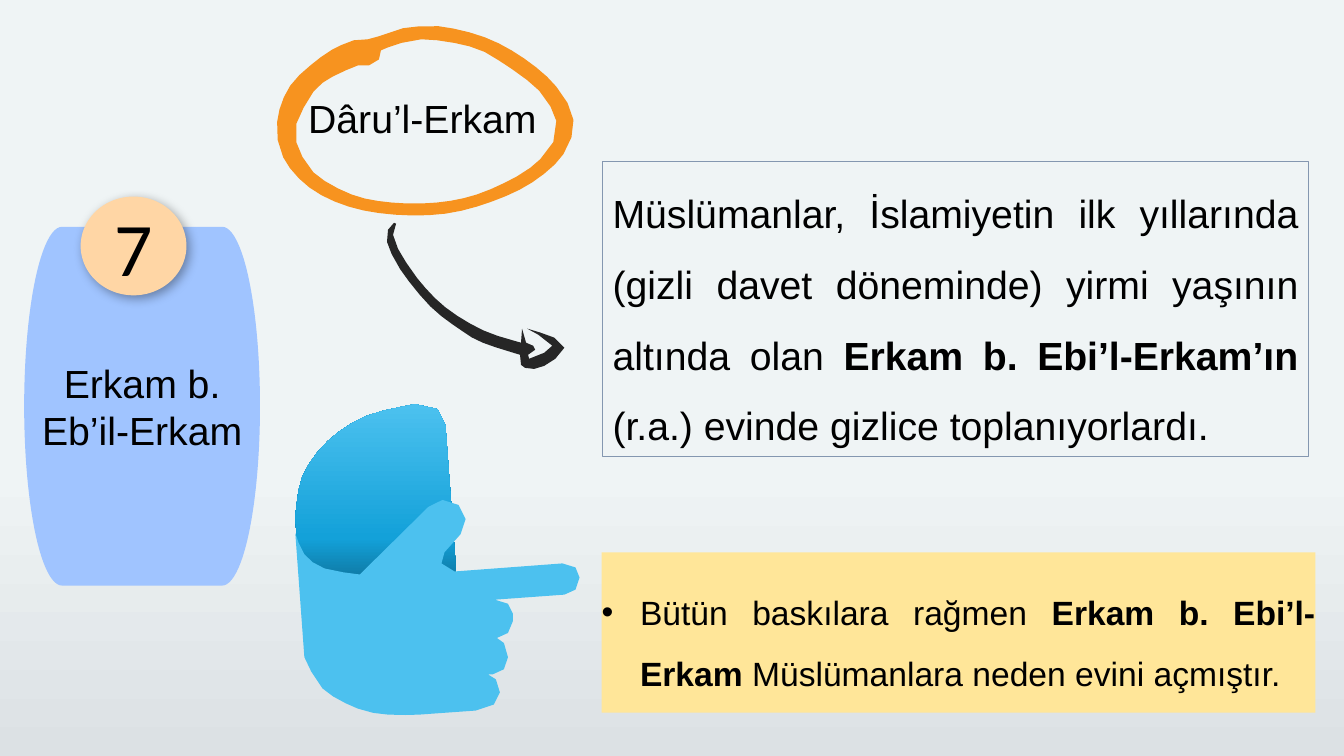
"""Build the slide about Erkam b. Ebi'l-Erkam and his house."""
from copy import deepcopy
from math import dist

from pptx import Presentation
from pptx.dml.color import RGBColor
from pptx.enum.shapes import MSO_SHAPE
from pptx.enum.text import MSO_ANCHOR, MSO_AUTO_SIZE, PP_ALIGN
from pptx.oxml import parse_xml
from pptx.oxml.ns import nsdecls, qn
from pptx.util import Cm, Pt

CENTER, JUSTIFY, LEFT = PP_ALIGN.CENTER, PP_ALIGN.JUSTIFY, PP_ALIGN.LEFT
MIDDLE, TOP = MSO_ANCHOR.MIDDLE, MSO_ANCHOR.TOP
GRID = 0.0254
STRIDE = 15

NAME = [("Erkam b. Eb’il-Erkam", False)]
NUMBER = [("7", False)]
HOUSE = [("Dâru’l-Erkam", False)]
STORY = [
    ("Müslümanlar, İslamiyetin ilk yıllarında (gizli davet döneminde) "
     "yirmi yaşının altında olan ", False),
    ("Erkam b. Ebi’l-Erkam’ın ", True),
    ("(r.a.) evinde gizlice toplanıyorlardı.", False),
]
QUESTION = [
    ("Bütün baskılara rağmen ", False),
    ("Erkam b. Ebi’l-Erkam ", True),
    ("Müslümanlara neden evini açmıştır.", False),
]

SKY = [(62, "EFF4F5"), (100, "DCE1E4")]
CUFF = [(0, "0D6B91"), (29, "13A1D9"), (100, "4CC1EF")]

ARROW = [[
    [(551, 356), (560, 345), (550, 335), (523, 326)],
    [(534, 332), (548, 343), (540, 350), (525, 356)],
    [(524, 352), (531, 347), (529, 343), (522, 340)],
    [(518, 326)],
    [(517, 340), (480, 328), (442, 305), (414, 276), (395, 247), (390, 233), (393, 222)],
    [(391, 221), (385, 228), (384, 240), (397, 267), (427, 304), (458, 328),
     (479, 340), (516, 352)],
    [(517, 362), (521, 365), (530, 366), (540, 363)],
]]
RING = [
    [[(376, 36), (365, 39), (351, 40), (338, 45), (318, 57), (288, 85), (275, 121),
      (281, 156), (307, 186), (346, 205), (392, 213), (442, 212), (488, 200),
      (528, 181), (559, 153), (569, 119), (552, 86), (520, 58), (481, 37),
      (435, 26), (400, 28)]],
    [[(385, 47), (418, 39), (466, 46), (495, 60), (535, 90), (552, 120),
      (549, 141), (536, 158), (513, 175), (473, 193), (433, 201), (389, 201),
      (349, 193), (311, 171), (294, 141), (294, 123), (311, 91), (330, 76), (355, 65)],
     [(366, 65), (376, 59), (378, 50)]],
]
SLEEVE = [[
    [(412, 401), (363, 413), (325, 438), (300, 473), (293, 513)],
    [(298, 583), (301, 587), (306, 588)],
    [(447, 578), (452, 576), (453, 572)],
    [(442, 422), (434, 406)],
]]
HAND = [[
    [(558, 559), (571, 563), (575, 573), (571, 585), (560, 590)],
    [(491, 595), (504, 599), (509, 609), (509, 616), (504, 628), (493, 633)],
    [(500, 638), (504, 652), (500, 664), (489, 669)],
    [(484, 669), (492, 674), (496, 687), (490, 699), (472, 705)],
    [(416, 709), (385, 709), (355, 703), (320, 683), (302, 652)],
    [(293, 529), (302, 550), (322, 564), (357, 570)],
    [(425, 503), (439, 496), (455, 501), (462, 515), (457, 530)],
    [(441, 548), (438, 559), (451, 567)],
]]


def rgb(code):
    return RGBColor.from_string(code)


def unit(value):
    return Cm(GRID * value)


def paint(shape, fill=None, line=None):
    shape.shadow.inherit = False
    if fill:
        shape.fill.solid()
        shape.fill.fore_color.rgb = rgb(fill)
    else:
        shape.fill.background()
    if line:
        shape.line.color.rgb = rgb(line)
        shape.line.width = Pt(0.75)
    else:
        shape.line.fill.background()


def blend(fill, root, stops, angle):
    fill.gradient()
    fill.gradient_angle = angle
    rows = root.find(".//" + qn("a:gsLst"))
    while len(rows) < len(stops):
        rows.append(deepcopy(rows[0]))
    for stop, (place, code) in zip(fill.gradient_stops, stops):
        stop.position = place / 100
        stop.color.rgb = rgb(code)


def write(shape, parts, size, align=CENTER, anchor=MIDDLE, font="Arial",
          inset=None, space=None, wrap=True):
    frame = shape.text_frame
    frame.word_wrap = wrap
    frame.vertical_anchor = anchor
    if inset is not None:
        frame.margin_left = frame.margin_right = inset
        frame.margin_top = frame.margin_bottom = inset
    para = frame.paragraphs[0]
    para.alignment = align
    if space:
        para.line_spacing = space
    for text, bold in parts:
        run = para.add_run()
        run.text = text
        run.font.size = Pt(size)
        run.font.name = font
        run.font.bold = bold
        run.font.color.rgb = rgb("000000")
    return para


def smooth(run):
    ends = [run[0]] + run + [run[-1]]
    dots = [run[0]]
    for a, b, c, d in zip(ends, ends[1:], ends[2:], ends[3:]):
        steps = max(1, round(dist(b, c) / STRIDE))
        for step in range(1, steps + 1):
            t = step / steps
            dots.append(tuple(
                (2 * q + (r - p) * t + (2 * p - 5 * q + 4 * r - s) * t ** 2
                 + (3 * q - p - 3 * r + s) * t ** 3) / 2
                for p, q, r, s in zip(a, b, c, d)))
    return dots


def trace(shapes, loops, fill):
    pen = None
    for loop in loops:
        dots = [(unit(x), unit(y)) for run in loop for x, y in smooth(run)]
        if pen is None:
            pen = shapes.build_freeform(*dots[0], scale=1.0)
        else:
            pen.move_to(*dots[0])
        pen.add_line_segments(dots[1:], close=True)
    shape = pen.convert_to_shape()
    paint(shape, fill)
    return shape


def block(shapes, kind, box, fill):
    shape = shapes.add_shape(kind, *map(unit, box))
    paint(shape, fill)
    return shape


def main():
    deck = Presentation()
    deck.slide_width, deck.slide_height = Cm(33.87), Cm(19.05)
    slide = deck.slides.add_slide(deck.slide_layouts[6])
    shapes = slide.shapes
    blend(slide.background.fill, slide.element, SKY, 270)

    name = block(shapes, MSO_SHAPE.FLOWCHART_TERMINATOR, (24, 225, 234, 356), "A0C4FF")
    write(name, NAME, 28, inset=0)

    badge = block(shapes, MSO_SHAPE.OVAL, (80, 195, 105, 98), "FFD6A5")
    write(badge, NUMBER, 54, font="Calibri")
    glow = badge.element.spPr.find(qn("a:effectLst"))
    glow.append(parse_xml(
        f'<a:outerShdw {nsdecls("a")} blurRad="{Pt(8)}" dist="{Pt(3)}" dir="2700000" '
        'algn="tl" rotWithShape="0"><a:srgbClr val="000000">'
        '<a:alpha val="34000"/></a:srgbClr></a:outerShdw>'))

    trace(shapes, ARROW, "262626")
    trace(shapes, RING, "F7931F")
    house = shapes.add_textbox(*map(unit, (296, 89, 250, 57)))
    write(house, HOUSE, 28, LEFT, TOP, wrap=False)

    story = shapes.add_textbox(*map(unit, (598, 160, 700, 293)))
    paint(story, line="8497B0")
    write(story, STORY, 28, JUSTIFY, TOP, space=1.5)
    for box in (house, story):
        box.text_frame.auto_size = MSO_AUTO_SIZE.SHAPE_TO_FIT_TEXT

    sleeve = trace(shapes, SLEEVE, "4CC1EF")
    blend(sleeve.fill, sleeve.element, CUFF, 90)
    trace(shapes, HAND, "4CC1EF")

    ask = block(shapes, MSO_SHAPE.RECTANGLE, (597, 548, 708, 159), "FFE699")
    para = write(ask, QUESTION, 24, JUSTIFY, inset=0, space=1.5)
    props = para._p.get_or_add_pPr()
    props.set("marL", str(unit(38)))
    props.set("indent", str(-unit(38)))
    props.append(parse_xml(f'<a:buFont {nsdecls("a")} typeface="Arial"/>'))
    props.append(parse_xml(f'<a:buChar {nsdecls("a")} char="•"/>'))

    deck.save("out.pptx")


if __name__ == "__main__":
    main()
